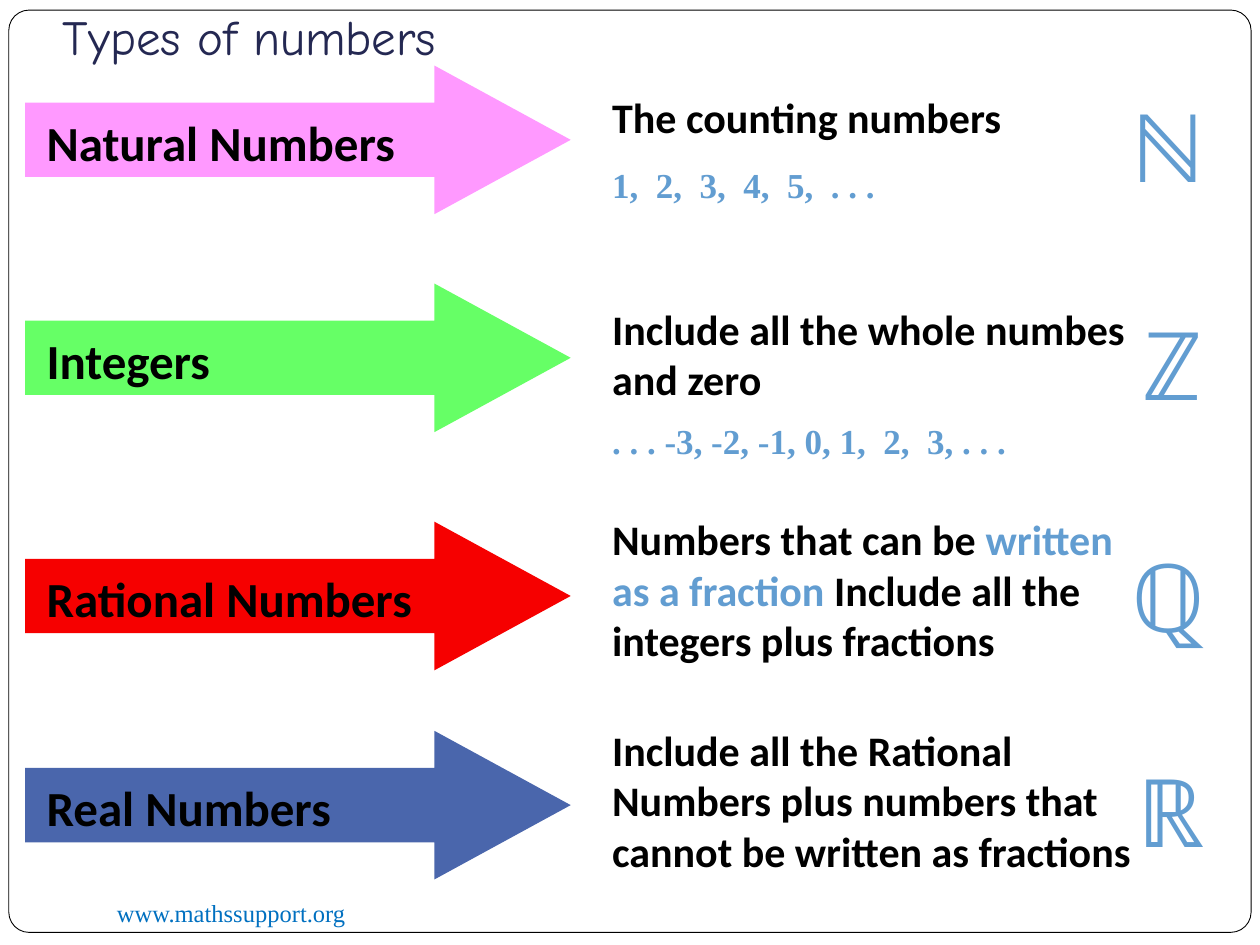
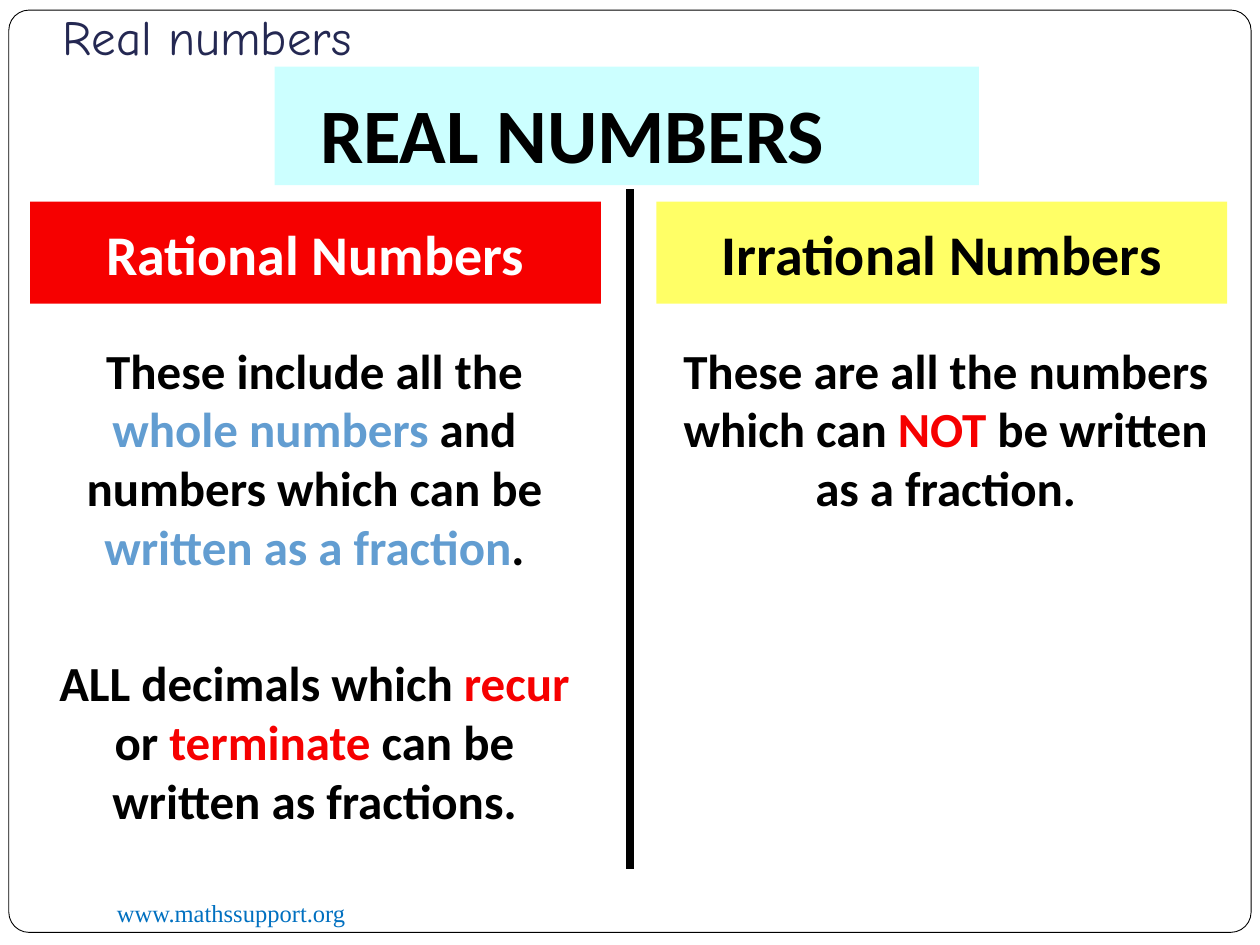
from lxml import etree
from pptx import Presentation
from pptx.dml.color import RGBColor
from pptx.enum import shapes, text
from pptx.oxml.ns import qn
from pptx.util import Inches, Pt

# Shared style
BLACK, WHITE, NAVY, LINK = "000000", "FFFFFF", "242852", "0070C0"
BLUE, RED = "629DD1", "F60000"
BODY, SERIF, TITLE, SYMBOL = "Calibri", "Times New Roman", "Comic Neue", "Lato"
FOOTER = "www.mathssupport.org"
SHAPE, ALIGN, ANCHOR = shapes.MSO_SHAPE, text.PP_ALIGN, text.MSO_ANCHOR

# Slide 1: each set has an arrow, a description, examples and a symbol
TYPES_TITLE = "Types of numbers"
NUMBER_SETS = [
    dict(name="Natural Numbers", fill="FF99FF", top=0.52,
         about=["The counting numbers"], about_top=0.68,
         examples="1,  2,  3,  4,  5,  . . .", examples_top=1.25,
         symbol="ℕ", symbol_at=(8.88, 0.65)),
    dict(name="Integers", fill="66FF66", top=2.25,
         about=["Include all the whole numbes and zero"], about_top=2.36,
         examples=". . . -3, -2, -1, 0, 1,  2,  3, . . .", examples_top=3.28,
         symbol="ℤ", symbol_at=(8.97, 2.38)),
    dict(name="Rational Numbers", fill=RED, top=4.14,
         about=["Numbers that can be ", ("written as a fraction ", BLUE),
                "Include all the integers plus fractions"], about_top=4.03,
         symbol="ℚ", symbol_at=(8.88, 4.22)),
    dict(name="Real Numbers", fill="4A66AC", top=5.8,
         about=["Include all the Rational Numbers plus numbers that "
                "cannot be written as fractions"], about_top=5.7,
         symbol="ℝ", symbol_at=(8.93, 5.93)),
]

# Slide 2: two columns under one banner
REAL_TITLE = "Real numbers"
BANNER = "REAL NUMBERS"
COLUMNS = [
    dict(name="Rational Numbers", fill=RED, color=WHITE, left=0.24, text_left=0.27,
         notes=[
             (2.65, 1.97, ["These include all the ", ("whole numbers", BLUE),
                           " and numbers which can be ",
                           ("written as a fraction", BLUE), "."]),
             (5.13, 1.5, ["ALL decimals which ", ("recur", RED), " or ",
                          ("terminate", RED), " can be written as fractions."]),
         ]),
    dict(name="Irrational Numbers", fill="FFFF66", color=BLACK, left=5.21, text_left=5.28,
         notes=[
             (2.65, 1.51, ["These are all the numbers which can ", ("NOT", RED),
                           " be written as a fraction."]),
         ]),
]


def rgb(value):
    return RGBColor.from_string(value)


def write(box, spans, size, font=BODY, color=BLACK, bold=True, align=ALIGN.LEFT,
          anchor=ANCHOR.TOP, insets=(0.1, 0.05, 0.1, 0.05)):
    """Fill a box with spans: plain strings, or (string, colour) pairs."""
    frame = box.text_frame
    frame.word_wrap = True
    frame.vertical_anchor = anchor
    (frame.margin_left, frame.margin_top,
     frame.margin_right, frame.margin_bottom) = map(Inches, insets)
    para = frame.paragraphs[0]
    para.alignment = align
    for item in spans:
        words, span_color = (item, color) if isinstance(item, str) else item
        span = para.add_run()
        span.text = words
        span.font.name = font
        span.font.size = Pt(size)
        span.font.bold = bold
        span.font.color.rgb = rgb(span_color)


def add_text(page, at, spans, size, **style):
    write(page.shapes.add_textbox(*map(Inches, at)), spans, size, **style)


def add_block(page, kind, at, fill):
    block = page.shapes.add_shape(kind, *map(Inches, at))
    block.shadow.inherit = False
    block.fill.solid()
    block.fill.fore_color.rgb = rgb(fill)
    block.line.fill.background()
    return block


def add_page(deck, title):
    """Start a page with the rounded frame, footer and title."""
    page = deck.slides.add_slide(deck.slide_layouts[6])
    frame = add_block(page, SHAPE.ROUNDED_RECTANGLE, (0.07, 0.08, 9.86, 7.32), WHITE)
    frame.adjustments[0] = 0.022
    frame.line.color.rgb = rgb(BLACK)
    frame.line.width = Pt(0.5)
    add_text(page, (0.83, 7.08, 3.25, 0.34), [FOOTER], 14,
             font=SERIF, color=LINK, bold=False)
    add_text(page, (0.5, -0.03, 9, 0.55), [title], 28, font=TITLE, color=NAVY,
             bold=False, anchor=ANCHOR.BOTTOM, insets=(0, 0.05, 0, 0))
    return page


def build_types(deck):
    page = add_page(deck, TYPES_TITLE)
    for number_set in NUMBER_SETS:
        arrow = add_block(page, SHAPE.RIGHT_ARROW,
                          (0.2, number_set["top"], 4.33, 1.18), number_set["fill"])
        arrow.adjustments[1] = 0.917
        write(arrow, [number_set["name"]], 28, anchor=ANCHOR.MIDDLE,
              insets=(0.17, 0.08, 0, 0.05))
        add_text(page, (4.76, number_set["about_top"], 4.4, 1.31),
                 number_set["about"], 24)
        if "examples" in number_set:
            add_text(page, (4.76, number_set["examples_top"], 4.4, 0.44),
                     [number_set["examples"]], 20, font=SERIF, color=BLUE)
        add_text(page, (*number_set["symbol_at"], 0.9, 1.01),
                 [number_set["symbol"]], 54, font=SYMBOL, color=BLUE, bold=False)


def build_real(deck):
    page = add_page(deck, REAL_TITLE)
    banner = add_block(page, SHAPE.RECTANGLE, (2.18, 0.53, 5.59, 0.94), "CCFFFF")
    write(banner, [BANNER], 44, anchor=ANCHOR.MIDDLE, insets=(0.36, 0.13, 0, 0.03))

    for column in COLUMNS:
        header = add_block(page, SHAPE.RECTANGLE,
                           (column["left"], 1.6, 4.53, 0.81), column["fill"])
        write(header, [column["name"]], 32, color=column["color"],
              align=ALIGN.CENTER, anchor=ANCHOR.MIDDLE)
        for top, height, spans in column["notes"]:
            add_text(page, (column["text_left"], top, 4.45, height), spans, 28,
                     align=ALIGN.CENTER)

    # Divider between the columns
    divider = page.shapes.add_connector(shapes.MSO_CONNECTOR.STRAIGHT,
                                        *map(Inches, (5, 1.5, 5, 6.9)))
    divider.line.color.rgb = rgb(BLACK)
    divider.line.width = Pt(4.5)
    etree.SubElement(divider._element.spPr, qn("a:effectLst"))


def main():
    deck = Presentation()
    deck.slide_width, deck.slide_height = Inches(10), Inches(7.5)
    build_types(deck)
    build_real(deck)
    deck.save("out.pptx")


if __name__ == "__main__":
    main()
